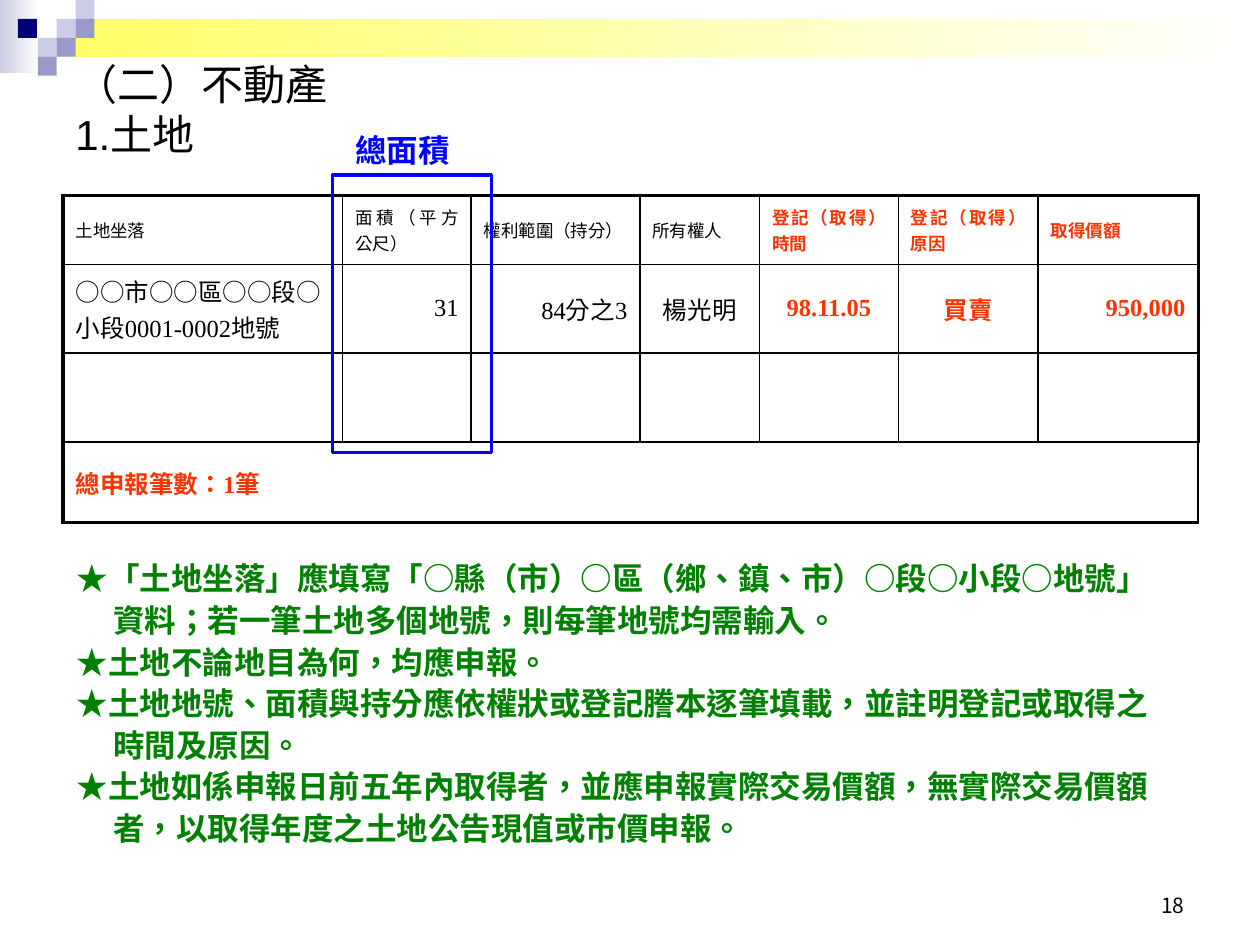
from lxml.etree import SubElement
from pptx import Presentation
from pptx.dml.color import RGBColor
from pptx.enum.lang import MSO_LANGUAGE_ID
from pptx.enum.shapes import MSO_SHAPE
from pptx.enum.text import MSO_ANCHOR, PP_ALIGN
from pptx.oxml.ns import qn
from pptx.util import Inches, Pt

COLORS = {
    "black": "000000", "white": "FFFFFF", "lavender": "CCCCE6", "violet": "9999CC",
    "navy": "00007D", "yellow": "FFFF66", "red": "FF3300", "green": "008000",
    "blue": "0000FF",
}
SANS, SERIF, CJK = "Arial", "Times New Roman", "Noto Sans CJK SC"
ALIGN = {"l": PP_ALIGN.LEFT, "r": PP_ALIGN.RIGHT, "c": PP_ALIGN.CENTER,
         "j": PP_ALIGN.JUSTIFY}

COLUMNS = [2.22, 1.02, 1.34, 0.95, 1.1, 1.11, 1.27]
ROWS = [0.55, 0.7, 0.71, 0.64]
HEADERS = ["土地坐落", "面積（平方公尺）", "權利範圍（持分）", "所有權人",
           "登記（取得）時間", "登記（取得）原因", "取得價額"]
WRAPPED_HEADERS = {1, 4, 5}
FIRST_RED_COLUMN = 4
LAND = [("○○市○○區○○段○小段0001-0002地號", "l"), ("31", "r"), ("84分之3", "r"),
        ("楊光明", "c"), ("98.11.05", "c"), ("買賣", "c"), ("950,000", "r")]
UNINDENTED_LAND = {0, 2}
NOTES = [
    "★「土地坐落」應填寫「○縣（市）○區（鄉、鎮、市）○段○小段○地號」資料；"
    "若一筆土地多個地號，則每筆地號均需輸入。",
    "★土地不論地目為何，均應申報。",
    "★土地地號、面積與持分應依權狀或登記謄本逐筆填載，並註明登記或取得之時間及原因。",
    "★土地如係申報日前五年內取得者，並應申報實際交易價額，無實際交易價額者，"
    "以取得年度之土地公告現值或市價申報。",
]


def rgb(name):
    return RGBColor.from_string(COLORS[name])


def write(paragraph, text, size, font=SANS, color="black", bold=False, align="l",
          hanging=0):
    """Fill one paragraph; a newline in the text becomes a line break."""
    paragraph.alignment = ALIGN[align]
    if hanging:
        properties = paragraph._p.get_or_add_pPr()
        properties.set("marL", str(Inches(hanging)))
        properties.set("indent", str(-Inches(hanging)))
    formats = {"size": Pt(size), "name": font, "bold": bold,
               "language_id": MSO_LANGUAGE_ID.TRADITIONAL_CHINESE}
    for index, line in enumerate(text.split("\n")):
        if index:
            paragraph.add_line_break()
        run = paragraph.add_run()
        run.text = line
        for attribute, value in formats.items():
            setattr(run.font, attribute, value)
        run.font.color.rgb = rgb(color)
        SubElement(run._r.get_or_add_rPr(), qn("a:ea"), typeface=CJK)


def add_text(slide, box, lines, anchor=MSO_ANCHOR.TOP, spacing=None, **style):
    frame = slide.shapes.add_textbox(*map(Inches, box)).text_frame
    frame.word_wrap = True
    frame.vertical_anchor = anchor
    for index, line in enumerate(lines):
        paragraph = frame.add_paragraph() if index else frame.paragraphs[0]
        paragraph.line_spacing = spacing
        write(paragraph, line, **style)


def add_rect(slide, box, *fill, line=None):
    """No fill colour leaves it hollow, one is solid, two are a gradient."""
    rect = slide.shapes.add_shape(MSO_SHAPE.RECTANGLE, *map(Inches, box))
    rect.shadow.inherit = False
    if len(fill) == 2:
        rect.fill.gradient()
        rect.fill.gradient_angle = 0
        for stop, name in zip(rect.fill.gradient_stops, fill):
            stop.color.rgb = rgb(name)
    elif fill:
        rect.fill.solid()
        rect.fill.fore_color.rgb = rgb(fill[0])
    else:
        rect.fill.background()
    if line:
        rect.line.color.rgb = rgb(line)
        rect.line.width = Pt(2)
    else:
        rect.line.fill.background()


def add_banner(slide, left, top, width):
    unit = 0.15
    add_rect(slide, (left, top, 0.31, 0.58), "lavender", "white")
    add_rect(slide, (left + 3 * unit, top + unit, width - 3 * unit, 2 * unit),
             "yellow", "white")
    # Checker squares as (column, row, colour)
    squares = [(3, 1, "lavender"), (4, 0, "lavender"), (4, 1, "violet"),
               (2, 2, "lavender"), (0.95, 1, "navy"), (3, 2, "violet"),
               (2, 3, "violet")]
    for column, row, color in squares:
        add_rect(slide, (left + column * unit, top + row * unit, unit, unit), color)


def style_cell(cell, row, column):
    """Thin grid lines with a thicker outer frame."""
    cell.vertical_anchor = MSO_ANCHOR.MIDDLE
    outer = {"L": column == 0, "R": column == len(COLUMNS) - 1,
             "T": row == 0, "B": row == len(ROWS) - 1}
    properties = cell._tc.get_or_add_tcPr()
    for side, is_outer in outer.items():
        border = SubElement(properties, qn(f"a:ln{side}"),
                            w=str(Pt(2 if is_outer else 1)))
        fill = SubElement(border, qn("a:solidFill"))
        SubElement(fill, qn("a:srgbClr"), val=COLORS["black"])
    cell.fill.background()


def add_land_table(slide, box):
    table = slide.shapes.add_table(len(ROWS), len(COLUMNS), *map(Inches, box)).table
    table.first_row = table.horz_banding = False
    for column, width in zip(table.columns, COLUMNS):
        column.width = Inches(width)
    for row, height in zip(table.rows, ROWS):
        row.height = Inches(height)
    for row in range(len(ROWS)):
        for column in range(len(COLUMNS)):
            style_cell(table.cell(row, column), row, column)

    # Header and the filled-in plot of land
    for column, (header, (value, align)) in enumerate(zip(HEADERS, LAND)):
        is_red = column >= FIRST_RED_COLUMN
        emphasis = {"color": "red" if is_red else "black", "bold": is_red}
        write(table.cell(0, column).text_frame.paragraphs[0], header, 10, CJK,
              align="j", hanging=0 if column in WRAPPED_HEADERS else 0.38, **emphasis)
        write(table.cell(1, column).text_frame.paragraphs[0], value, 14, SERIF,
              align=align, hanging=0 if column in UNINDENTED_LAND else 0.38,
              **emphasis)

    # Total across the bottom row
    last = len(ROWS) - 1
    total = table.cell(last, 0)
    total.merge(table.cell(last, len(COLUMNS) - 1))
    write(total.text_frame.paragraphs[0], "總申報筆數：1筆", 14, SERIF, "red", True,
          hanging=0.38)


def add_area_callout(slide, left, top):
    add_rect(slide, (left, top + 0.4, 1.26, 2.2), line="blue")
    add_text(slide, (left + 0.08, top, 1.05, 0.4), ["總面積"], size=18,
             color="blue", bold=True)


def main():
    presentation = Presentation()
    presentation.slide_width, presentation.slide_height = Inches(10), Inches(7.5)
    slide = presentation.slides.add_slide(presentation.slide_layouts[6])

    add_banner(slide, 0, 0, 10)
    add_text(slide, (7.17, 6.83, 2.33, 0.5), ["18"], MSO_ANCHOR.BOTTOM,
             size=12, font=CJK, align="r")
    add_text(slide, (0.5, 0.5, 9, 0.73), ["（二）不動產\n1.土地"],
             MSO_ANCHOR.MIDDLE, size=24)
    add_land_table(slide, (0.5, 1.55, 9, 2.6))
    add_text(slide, (0.51, 4.36, 8.9, 2.41), NOTES, MSO_ANCHOR.MIDDLE, spacing=1.1,
             size=18, color="green", bold=True, hanging=0.29)
    add_area_callout(slide, 2.64, 0.99)
    presentation.save("out.pptx")


if __name__ == "__main__":
    main()
